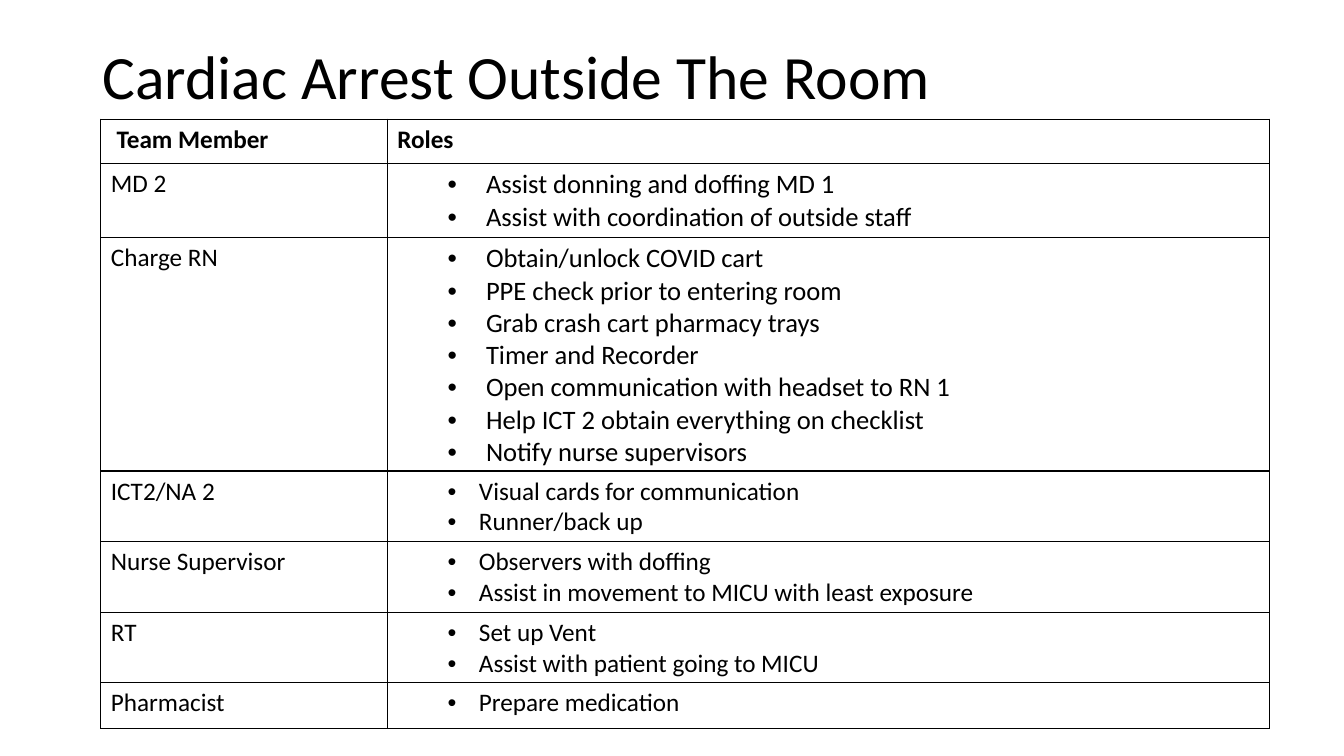
from lxml import etree
from pptx import Presentation
from pptx.dml.color import RGBColor
from pptx.enum.text import MSO_ANCHOR
from pptx.oxml.ns import qn
from pptx.util import Inches, Pt

MIDDLE = MSO_ANCHOR.MIDDLE
BLACK = RGBColor(0x00, 0x00, 0x00)
WHITE = RGBColor(0xFF, 0xFF, 0xFF)
COLS, ROWS = 160, 90

# Role table: member, bullet size, bullet indent in inches, row height, duties
HEADINGS = (" Team Member", "Roles")
HEADING_HEIGHT = 5.28
LARGE, SMALL = (19, 0.38), (18, 0.31)
TEAM = [
    ("MD 2", LARGE, 8.28, ["Assist donning and doffing MD 1",
                           "Assist with coordination of outside staff"]),
    ("Charge RN", LARGE, 26.28, ["Obtain/unlock COVID cart",
                                 "PPE check prior to entering room",
                                 "Grab crash cart pharmacy trays",
                                 "Timer and Recorder",
                                 "Open communication with headset to RN 1",
                                 "Help ICT 2 obtain everything on checklist",
                                 "Notify nurse supervisors"]),
    ("ICT2/NA 2", SMALL, 7.92, ["Visual cards for communication",
                                "Runner/back up"]),
    ("Nurse Supervisor", SMALL, 7.92, ["Observers with doffing",
                                       "Assist in movement to MICU with least exposure"]),
    ("RT", SMALL, 7.92, ["Set up Vent", "Assist with patient going to MICU"]),
    ("Pharmacist", SMALL, 5.4, ["Prepare medication"]),
]


class SlideBuilder:
    """Places styled elements on a grid of COLS by ROWS."""
    font = "Calibri"
    body_size = 18
    border = Pt(1)

    def __init__(self, prs):
        self.col = prs.slide_width / COLS
        self.row = prs.slide_height / ROWS
        self.s = prs.slides.add_slide(prs.slide_layouts[6])
        self.s.background.fill.solid()
        self.s.background.fill.fore_color.rgb = WHITE

    def x(self, n):
        return round(n * self.col)

    def y(self, n):
        return round(n * self.row)

    def run(self, p, text, size, bold=False):
        r = p.add_run()
        r.text = text
        r.font.name = self.font
        r.font.size = Pt(size)
        r.font.bold = bold
        r.font.color.rgb = BLACK

    def title(self, text, left, top, width, height):
        sp = self.s.shapes.add_textbox(self.x(left), self.y(top),
                                       self.x(width), self.y(height))
        tf = sp.text_frame
        tf.word_wrap = True
        tf.vertical_anchor = MIDDLE
        p = tf.paragraphs[0]
        p.line_spacing = 0.9
        self.run(p, text, 44)

    def table(self, left, top, widths, heights):
        frame = self.s.shapes.add_table(
            len(heights), len(widths), self.x(left), self.y(top),
            self.x(sum(widths)), self.y(sum(heights)))
        tbl = frame.table
        tbl.first_row = tbl.horz_banding = False
        for column, width in zip(tbl.columns, widths):
            column.width = self.x(width)
        for row, height in zip(tbl.rows, heights):
            row.height = self.y(height)
        for cell in tbl.iter_cells():
            self.outline(cell)
            cell.fill.background()
        return tbl

    def outline(self, cell):
        tcPr = cell._tc.get_or_add_tcPr()
        for side in ("a:lnL", "a:lnR", "a:lnT", "a:lnB"):
            ln = etree.SubElement(tcPr, qn(side), w=str(self.border))
            fill = etree.SubElement(ln, qn("a:solidFill"))
            etree.SubElement(fill, qn("a:srgbClr"), val=str(BLACK))

    def label(self, cell, text, bold=False):
        self.run(cell.text_frame.paragraphs[0], text, self.body_size, bold)

    def bullets(self, cell, items, size, hang):
        tf = cell.text_frame
        for i, item in enumerate(items):
            p = tf.add_paragraph() if i else tf.paragraphs[0]
            p.level = 1
            pPr = p._p.get_or_add_pPr()
            pPr.set("marL", str(Inches(0.5 + hang)))
            pPr.set("indent", str(-Inches(hang)))
            etree.SubElement(pPr, qn("a:buFont"), typeface="Arial")
            etree.SubElement(pPr, qn("a:buChar"), char="•")
            self.run(p, item, size)


def main():
    prs = Presentation()
    prs.slide_width, prs.slide_height = Inches(13.33), Inches(7.5)
    slide = SlideBuilder(prs)

    # Title
    slide.title("Cardiac Arrest Outside The Room", 11, 0.72, 138, 17.4)

    # Team roles
    heights = [HEADING_HEIGHT] + [height for _, _, height, _ in TEAM]
    tbl = slide.table(12, 14.2, (34.1, 105), heights)
    for j, heading in enumerate(HEADINGS):
        slide.label(tbl.cell(0, j), heading, bold=True)
    for i, (member, (size, hang), _, duties) in enumerate(TEAM, start=1):
        slide.label(tbl.cell(i, 0), member)
        slide.bullets(tbl.cell(i, 1), duties, size, hang)

    prs.save("out.pptx")


if __name__ == "__main__":
    main()
